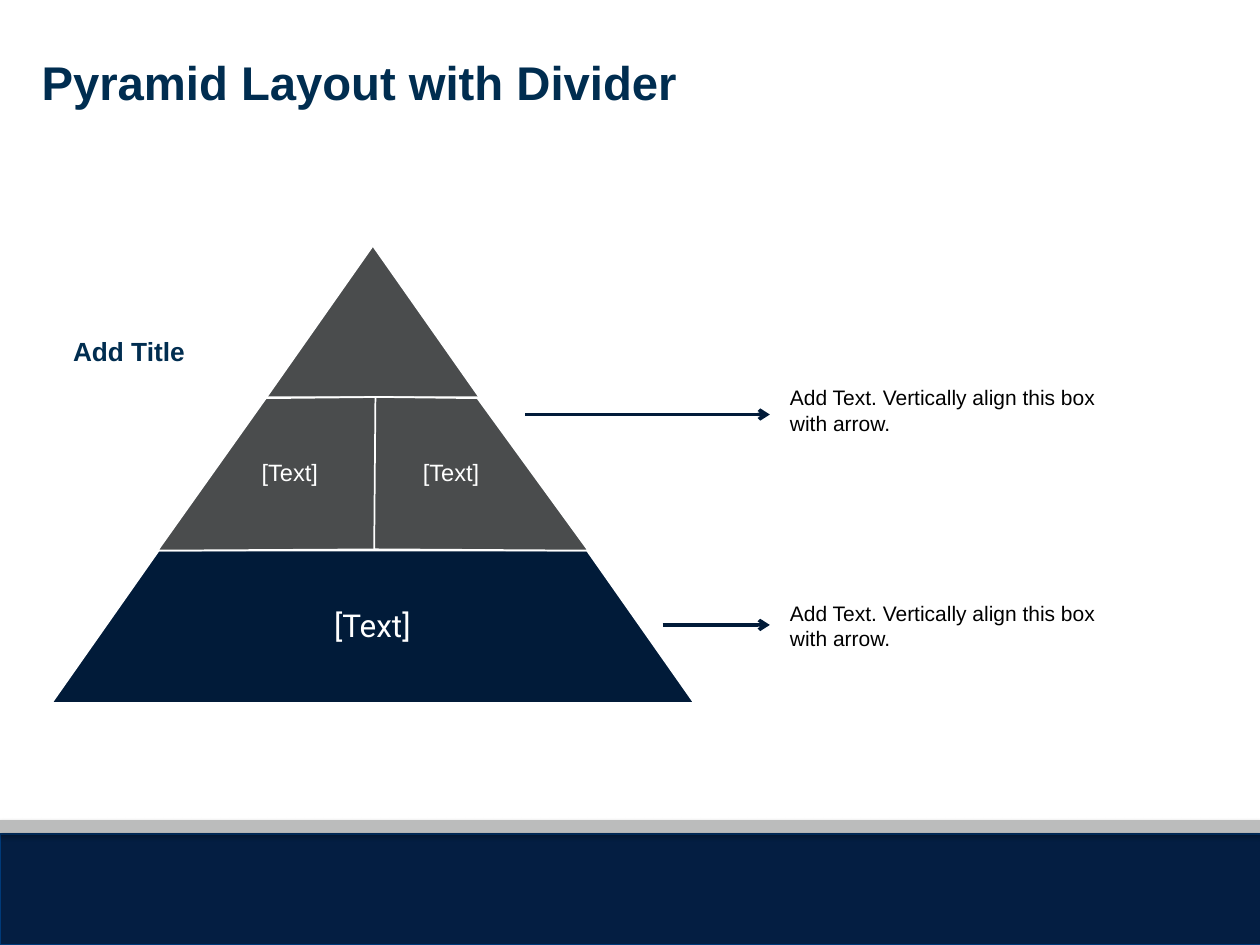
import pptx
import pptx.util
import pptx.dml.color
import pptx.enum.shapes
import pptx.enum.text
import pptx.oxml
import pptx.oxml.ns

Inches, Pt = pptx.util.Inches, pptx.util.Pt
RGBColor = pptx.dml.color.RGBColor
MSO_SHAPE = pptx.enum.shapes.MSO_SHAPE
ANCHOR = pptx.enum.text.MSO_ANCHOR
ALIGN = pptx.enum.text.PP_ALIGN

WHITE = RGBColor(0xFF, 0xFF, 0xFF)
BLACK = RGBColor(0, 0, 0)
HEADING = RGBColor(0x00, 0x2D, 0x50)
NAVY = RGBColor(0x01, 0x1B, 0x39)
GRAY = RGBColor(0x4A, 0x4C, 0x4D)
FOOTER = RGBColor(0x04, 0x1E, 0x42)
FOOTER_EDGE = RGBColor(0x00, 0x3A, 0x79)
STRIPE = RGBColor(0xBB, 0xBC, 0xBC)

# Pyramid grid: equal tiers, each widening by STEP on both sides
CENTER, TOP, TIER, STEP = 2.96, 1.95, 1.21, 0.85
LABEL_X, LABEL_W, LABEL_H = 6.19, 2.83, 0.67
ARROW_END = 6.11


def add_element(parent, xml):
    ns = pptx.oxml.ns.nsdecls("a")
    parent.append(pptx.oxml.parse_xml(xml.replace(" ", f" {ns} ", 1)))


def paint(sp, fill, line=None, width=1):
    sp.shadow.inherit = False
    sp.fill.solid()
    sp.fill.fore_color.rgb = fill
    if line is None:
        sp.line.fill.background()
    else:
        sp.line.color.rgb = line
        sp.line.width = Pt(width)


def style_text(tf, size, color, bold=False, font="Arial", align=None):
    p = tf.paragraphs[0]
    p.alignment = align
    for r in p.runs:
        r.font.size = Pt(size)
        r.font.name = font
        r.font.bold = bold
        r.font.color.rgb = color
    return p


def add_text(s, text, x, y, w, h, size, color, inset=(0.08, 0.04), **style):
    tf = s.shapes.add_textbox(Inches(x), Inches(y), Inches(w), Inches(h)).text_frame
    tf.word_wrap = True
    tf.vertical_anchor = ANCHOR.MIDDLE
    tf.margin_left = tf.margin_right = Inches(inset[0])
    tf.margin_top = tf.margin_bottom = Inches(inset[1])
    tf.text = text
    return style_text(tf, size, color, **style)


def add_bar(s, x, y, w, h, fill, line=None):
    sp = s.shapes.add_shape(MSO_SHAPE.RECTANGLE, Inches(x), Inches(y), Inches(w), Inches(h))
    paint(sp, fill, line, 0.75)
    effects = sp._element.spPr.find(pptx.oxml.ns.qn("a:effectLst"))
    add_element(effects, f'<a:outerShdw blurRad="{Pt(3.1)}" dist="{Pt(1.8)}" dir="5400000" '
                'rotWithShape="0"><a:srgbClr val="000000"><a:alpha val="35000"/>'
                '</a:srgbClr></a:outerShdw>')


def add_tier(s, row, fill, width=1):
    half = STEP * (row + 1)
    sp = s.shapes.add_shape(MSO_SHAPE.TRAPEZOID, Inches(CENTER - half), Inches(TOP + row * TIER),
                            Inches(2 * half), Inches(TIER))
    sp.adjustments[0] = STEP / TIER
    paint(sp, fill, WHITE, width)


def add_half(s, points):
    start, *rest = [(Inches(x), Inches(y)) for x, y in points]
    fb = s.shapes.build_freeform(*start)
    fb.add_line_segments(rest, close=True)
    paint(fb.convert_to_shape(), GRAY, WHITE)


def add_arrow(s, x, y):
    c = s.shapes.add_connector(pptx.enum.shapes.MSO_CONNECTOR.STRAIGHT,
                               Inches(x), Inches(y), Inches(ARROW_END), Inches(y))
    c.line.color.rgb = NAVY
    c.line.width = Pt(2)
    add_element(c.line._get_or_add_ln(), '<a:tailEnd type="arrow"/>')
    add_element(c._element.spPr, '<a:effectLst />')


def main():
    prs = pptx.Presentation()
    prs.slide_width, prs.slide_height = Inches(10), Inches(7.5)
    s = prs.slides.add_slide(prs.slide_layouts[5])

    # Footer
    add_bar(s, 0, 6.62, 10.02, 0.88, FOOTER, FOOTER_EDGE)
    add_bar(s, 0, 6.51, 10, 0.1, STRIPE)

    # Titles
    title = s.shapes.title
    title.left, title.top = Inches(0.23), Inches(0.37)
    title.width, title.height = Inches(9.5), Inches(0.96)
    title.text_frame.text = "Pyramid Layout with Divider"
    title.text_frame.vertical_anchor = ANCHOR.TOP
    style_text(title.text_frame, 27, HEADING, bold=True, align=ALIGN.LEFT)
    add_text(s, "Add Title", 0.5, 2.32, 1.64, 0.93, 15, HEADING, bold=True)

    # Arrows with their notes
    for x, y, note_y in ((4.17, 3.29, 2.92), (5.26, 4.96, 4.63)):
        add_arrow(s, x, y)
        add_text(s, "Add Text. Vertically align this box with arrow.",
                 LABEL_X, note_y, LABEL_W, LABEL_H, 12, BLACK)

    # Pyramid tiers
    add_tier(s, 0, GRAY)
    add_tier(s, 1, GRAY, 2)
    add_tier(s, 2, NAVY)
    p = add_text(s, "[Text]", 1.3, TOP + 2 * TIER, 3.31, TIER, 18, WHITE,
                 inset=(0.03, 0.03), font="Roboto", align=ALIGN.CENTER)
    p.line_spacing = 0.9

    # Middle tier, divided in two
    add_half(s, [(1.25, 4.37), (2.11, 3.16), (3.06, 3.15), (3.07, 4.36)])
    add_half(s, [(4.67, 4.37), (3.79, 3.16), (2.98, 3.15), (2.97, 4.36)])
    for x in (1.85, 3.13):
        add_text(s, "[Text]", x, 3.47, 0.9, 0.56, 13.5, WHITE, align=ALIGN.CENTER)

    prs.save("out.pptx")


if __name__ == "__main__":
    main()
